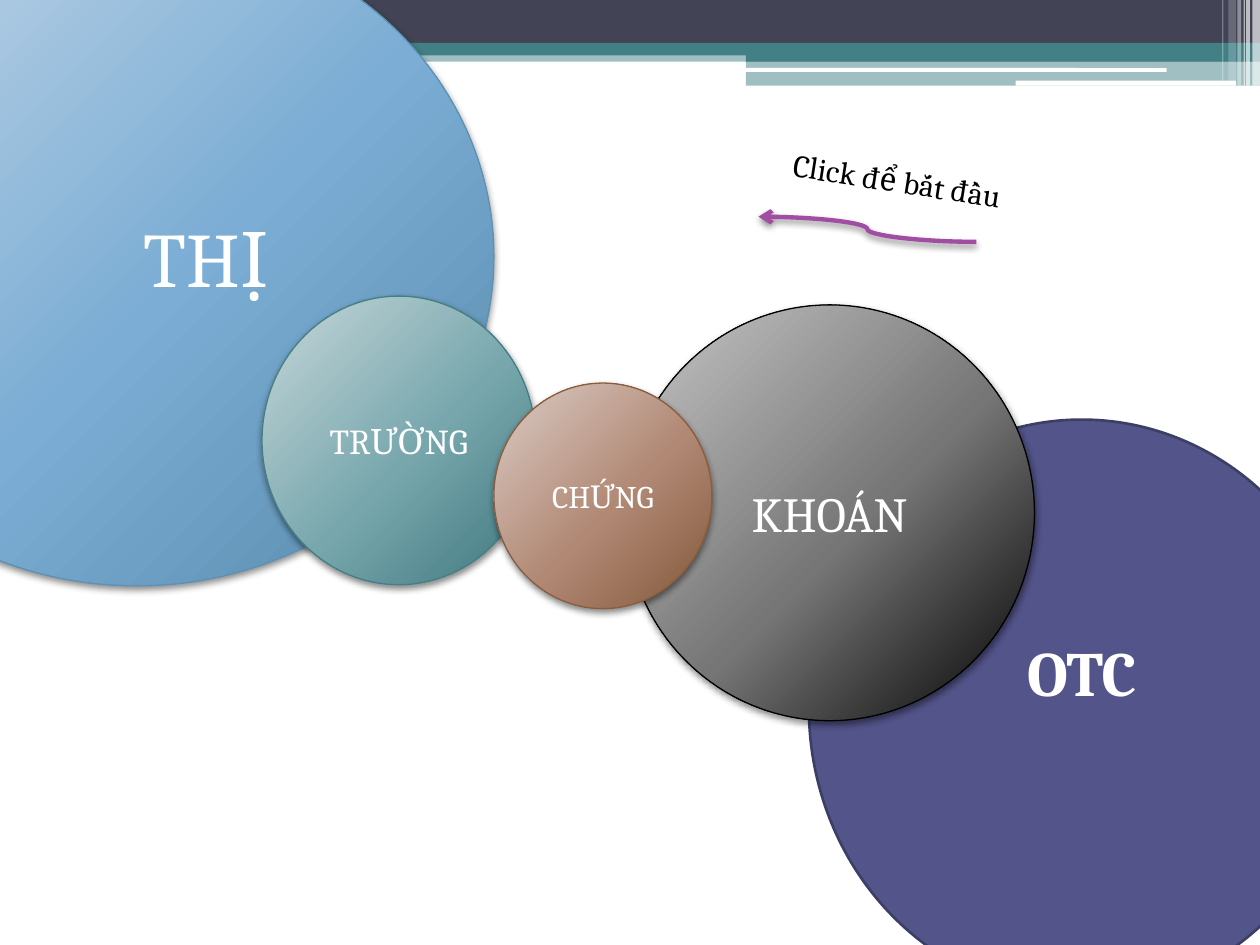
"""Title slide with five overlapping circles under a banded header."""
from lxml.etree import SubElement
from pptx import Presentation
from pptx.dml.color import RGBColor
from pptx.enum.shapes import MSO_CONNECTOR, MSO_SHAPE
from pptx.enum.text import MSO_ANCHOR, PP_ALIGN
from pptx.oxml import parse_xml
from pptx.oxml.ns import nsdecls, qn
from pptx.util import Inches, Pt

TEAL, NAVY, WHITE, BLACK, PURPLE = "438086", "424456", "FFFFFF", "000000", "A04DA3"

HEADER_BANDS = [
    ((0, 0.4, 10, 0.09), TEAL, 50),
    ((0, 0, 10, 0.34), NAVY, 100),
    ((0, 0.34, 10, 0.1), TEAL, 100),
    ((5.92, 0.39, 4.08, 0.1), TEAL, 100),
    ((5.92, 0.48, 4.08, 0.2), TEAL, 50),
]
ROUNDED_BARS = [(5.91, 0.54, 3.35, 0.03), (8.06, 0.64, 1.75, 0.04)]
STRIPES = [
    (9.94, 0.06, 0.68, 65), (9.89, 0.03, 0.68, 65), (9.87, 0.01, 0.68, 60),
    (9.82, 0.03, 0.68, 40), (9.75, 0.06, 0.64, 20), (9.7, 0.01, 0.64, 30),
]
CIRCLES = [
    {"text": "THỊ", "size": 44, "box": (-1.75, -0.58, 5.67, 5.23), "line": "5C92B5",
     "fill": ("C7D9EA", "7CADD4", "5688A9"), "frame": {"margin_left": Inches(1.2)}},
    {"text": "OTC", "size": 36, "box": (6.42, 3.33, 4.33, 4.58), "line": "3D3E66",
     "fill": "53548A", "frame": {"margin_bottom": Inches(0.63)}, "bold": True},
    {"text": "TRƯỜNG", "size": 20, "box": (2.08, 2.35, 2.17, 2.29), "line": TEAL,
     "fill": ("C7D7DA", "77A7AD", "3E777D")},
    {"text": "KHOÁN", "size": 28, "box": (4.96, 2.42, 3.25, 3.3), "line": BLACK,
     "fill": ("C8C8C8", "767676", BLACK)},
    {"text": "CHỨNG", "size": 18, "box": (3.92, 3.04, 1.73, 1.79), "line": "8B5D3D",
     "fill": ("DBCCC6", "B18874", "825739")},
]
HINT = {"text": "Click để bắt đầu", "size": 18, "box": (6.19, 1.24, 2, 0.4), "rotation": 8.9}
ARROW = (7.75, 1.92, 6.02, 1.72)


def rgb(value):
    return RGBColor.from_string(value)


def apply(target, values):
    for name, value in values.items():
        setattr(target, name, value)


def add_effects(shape, shadow):
    effects = SubElement(shape._element.spPr, qn("a:effectLst"))
    if shadow:
        effects.append(parse_xml(
            f'<a:outerShdw {nsdecls("a")} blurRad="{Pt(4)}" dist="{Pt(2)}" dir="5400000" '
            'rotWithShape="0"><a:srgbClr val="000000"><a:alpha val="45000"/></a:srgbClr>'
            '</a:outerShdw>'))


def add_gradient(shape, colors):
    stops = "".join(
        f'<a:gs pos="{position * 1000}"><a:srgbClr val="{color}"/></a:gs>'
        for position, color in zip((0, 55, 100), colors))
    shape._element.spPr.find(qn("a:prstGeom")).addnext(parse_xml(
        f'<a:gradFill {nsdecls("a")} rotWithShape="1"><a:gsLst>{stops}</a:gsLst>'
        '<a:path path="circle"><a:fillToRect l="-40000" t="-90000" r="140000" b="190000"/>'
        '</a:path></a:gradFill>'))


def add_band(slide, box, color, opacity=100, kind=MSO_SHAPE.RECTANGLE):
    shape = slide.shapes.add_shape(kind, *map(Inches, box))
    shape.fill.solid()
    shape.fill.fore_color.rgb = rgb(color)
    shape.line.fill.background()
    add_effects(shape, False)
    if opacity < 100:
        color_element = shape._element.spPr.find(qn("a:solidFill"))[0]
        SubElement(color_element, qn("a:alpha"), val=str(opacity * 1000))


def write_text(frame, item, color, align):
    paragraph = frame.paragraphs[0]
    paragraph.alignment = align
    run = paragraph.add_run()
    run.text = item["text"]
    apply(run.font, {"name": "Cambria", "size": Pt(item["size"]), "bold": item.get("bold", False)})
    run.font.color.rgb = rgb(color)


def add_circle(slide, circle):
    shape = slide.shapes.add_shape(MSO_SHAPE.OVAL, *map(Inches, circle["box"]))
    plain = isinstance(circle["fill"], str)
    if plain:
        shape.fill.solid()
        shape.fill.fore_color.rgb = rgb(circle["fill"])
    else:
        add_gradient(shape, circle["fill"])
    shape.line.color.rgb = rgb(circle["line"])
    shape.line.width = Pt(1.5 if plain else 0.75)
    add_effects(shape, not plain)
    apply(shape.text_frame, {"word_wrap": True, "vertical_anchor": MSO_ANCHOR.MIDDLE,
                             **circle.get("frame", {})})
    write_text(shape.text_frame, circle, WHITE, PP_ALIGN.CENTER)


def add_arrow(slide):
    arrow = slide.shapes.add_connector(MSO_CONNECTOR.CURVE, *map(Inches, ARROW))
    arrow.line.color.rgb = rgb(PURPLE)
    arrow.line.width = Pt(2.5)
    SubElement(arrow._element.spPr.find(qn("a:ln")), qn("a:tailEnd"), type="arrow")
    add_effects(arrow, True)


def add_hint(slide):
    box = slide.shapes.add_textbox(*map(Inches, HINT["box"]))
    box.rotation = HINT["rotation"]
    box.text_frame.word_wrap = True
    write_text(box.text_frame, HINT, BLACK, PP_ALIGN.LEFT)


def main():
    presentation = Presentation()
    apply(presentation, {"slide_width": Inches(10), "slide_height": Inches(7.5)})
    slide = presentation.slides.add_slide(presentation.slide_layouts[6])
    for box, color, opacity in HEADER_BANDS:
        add_band(slide, box, color, opacity)
    for box in ROUNDED_BARS:
        add_band(slide, box, WHITE, kind=MSO_SHAPE.ROUNDED_RECTANGLE)
    for left, width, height, opacity in STRIPES:
        add_band(slide, (left, 0, width, height), WHITE, opacity)
    for circle in CIRCLES:
        add_circle(slide, circle)
    add_arrow(slide)
    add_hint(slide)
    presentation.save("out.pptx")


if __name__ == "__main__":
    main()
